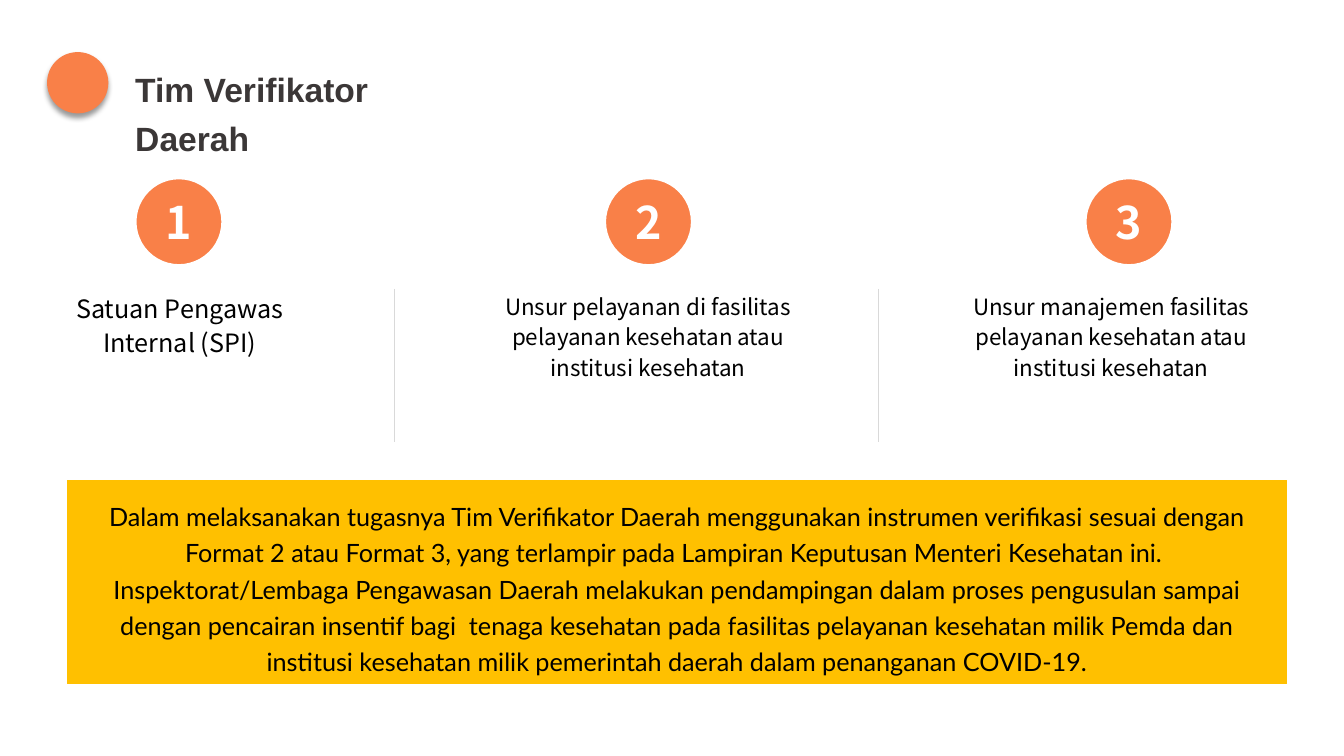
import pptx
import pptx.dml.color
import pptx.enum.shapes
import pptx.enum.text
import pptx.oxml
import pptx.oxml.ns
import pptx.util

SHAPES = pptx.enum.shapes.MSO_SHAPE
ALIGN = pptx.enum.text.PP_ALIGN
ANCHOR = pptx.enum.text.MSO_ANCHOR
WIDTH, HEIGHT = 13.33, 7.5
COLUMNS, ROWS = 16, 9

ORANGE, AMBER, GREY = "F98048", "FFC000", "D9D9D9"
WHITE, BLACK, CHARCOAL = "FFFFFF", "000000", "3B3737"
HEADING_FONT, CAPTION_FONT, BODY_FONT = "Arial", "Noto Sans CJK SC", "Lato"


def colour(hex_value):
    return pptx.dml.color.RGBColor.from_string(hex_value)


class SlideBuilder:
    """Draws on one slide; places are in columns and rows of a 16 by 9 grid."""

    def __init__(self, slide):
        self.slide = slide

    def place(self, left, top, width, height):
        column, row = WIDTH / COLUMNS, HEIGHT / ROWS
        return [pptx.util.Inches(length) for length in
                (left * column, top * row, width * column, height * row)]

    def set_text(self, frame, paragraphs, font, size, ink, bold=False,
                 align=ALIGN.CENTER, spacing=1.0, anchor=ANCHOR.TOP, insets=(0, 0, 0, 0)):
        frame.word_wrap = True
        frame.auto_size = pptx.enum.text.MSO_AUTO_SIZE.NONE
        frame.vertical_anchor = anchor
        (frame.margin_left, frame.margin_top, frame.margin_right,
         frame.margin_bottom) = [pptx.util.Inches(inset) for inset in insets]
        for index, words in enumerate(paragraphs):
            paragraph = frame.add_paragraph() if index else frame.paragraphs[0]
            paragraph.alignment = align
            paragraph.line_spacing = spacing
            paragraph.space_before = pptx.util.Pt(0)
            run = paragraph.add_run()
            run.text = words
            run.font.name = font
            run.font.size = pptx.util.Pt(size)
            run.font.bold = bold
            run.font.color.rgb = colour(ink)

    def title(self, words, *box):
        heading = self.slide.shapes.title
        heading.left, heading.top, heading.width, heading.height = self.place(*box)
        self.set_text(heading.text_frame, [words], HEADING_FONT, 24, CHARCOAL, bold=True,
                      align=ALIGN.LEFT, spacing=1.2, insets=(0.1, 0.05, 0.1, 0.05))

    def shape(self, preset, box, fill, outline=None, weight=0):
        drawn = self.slide.shapes.add_shape(preset, *self.place(*box))
        drawn.shadow.inherit = False
        drawn.fill.solid()
        drawn.fill.fore_color.rgb = colour(fill)
        if outline:
            drawn.line.color.rgb = colour(outline)
            drawn.line.width = pptx.util.Pt(weight)
        else:
            drawn.line.fill.background()
        return drawn

    def shadowed_disc(self, *box):
        disc = self.shape(SHAPES.OVAL, box, ORANGE)
        effects = disc._element.spPr.find(pptx.oxml.ns.qn("a:effectLst"))
        effects.append(pptx.oxml.parse_xml(
            f'<a:outerShdw {pptx.oxml.ns.nsdecls("a")} blurRad="{pptx.util.Pt(4)}" '
            f'dist="{pptx.util.Pt(3)}" dir="5400000" algn="ctr" rotWithShape="0">'
            f'<a:srgbClr val="{BLACK}"><a:alpha val="40000"/></a:srgbClr></a:outerShdw>'))

    def badge(self, number, left, top, size):
        circle = self.shape(SHAPES.OVAL, (left, top, size, size), ORANGE, WHITE, 3)
        self.set_text(circle.text_frame, [str(number)], CAPTION_FONT, 32, WHITE,
                      bold=True, anchor=ANCHOR.MIDDLE)

    def caption(self, words, size, *box):
        textbox = self.slide.shapes.add_textbox(*self.place(*box))
        self.set_text(textbox.text_frame, [words], CAPTION_FONT, size, BLACK, spacing=1.14)

    def divider(self, column, top, bottom):
        x, start, _, end = self.place(column, top, 0, bottom)
        rule = self.slide.shapes.add_connector(
            pptx.enum.shapes.MSO_CONNECTOR.STRAIGHT, x, start, x, end)
        rule.line.color.rgb = colour(GREY)
        rule.line.width = pptx.util.Pt(0.5)
        rule._element.spPr.append(pptx.oxml.parse_xml(
            f'<a:effectLst {pptx.oxml.ns.nsdecls("a")}/>'))

    def panel(self, paragraphs, *box):
        band = self.shape(SHAPES.RECTANGLE, box, AMBER, AMBER, 0.75)
        self.set_text(band.text_frame, paragraphs, BODY_FONT, 18, BLACK, spacing=1.2,
                      anchor=ANCHOR.MIDDLE, insets=(0.1, 0.13, 0.1, 0.05))


# Team members: badge column, caption column, caption width, text size, words
MEMBERS = [
    (1.6, 0.56, 3.16, 18, "Satuan Pengawas Internal (SPI)"),
    (7.19, 5.8, 3.83, 16,
     "Unsur pelayanan di fasilitas pelayanan kesehatan atau institusi kesehatan"),
    (12.91, 11.3, 3.86, 16,
     "Unsur manajemen fasilitas pelayanan kesehatan atau institusi kesehatan"),
]
DUTIES = [
    "Dalam melaksanakan tugasnya Tim Verifikator Daerah menggunakan instrumen "
    "verifikasi sesuai dengan Format 2 atau Format 3, yang terlampir pada Lampiran "
    "Keputusan Menteri Kesehatan ini. ",
    "Inspektorat/Lembaga Pengawasan Daerah melakukan pendampingan dalam proses "
    "pengusulan sampai dengan pencairan insentif bagi  tenaga kesehatan pada fasilitas "
    "pelayanan kesehatan milik Pemda dan institusi kesehatan milik pemerintah daerah "
    "dalam penanganan COVID-19.",
]


def main():
    deck = pptx.Presentation()
    deck.slide_width = pptx.util.Inches(WIDTH)
    deck.slide_height = pptx.util.Inches(HEIGHT)
    builder = SlideBuilder(deck.slides.add_slide(deck.slide_layouts[5]))

    # Heading
    builder.title("Tim Verifikator Daerah", 1.49, 0.67, 4.21, 0.59)
    builder.shadowed_disc(0.56, 0.62, 0.73, 0.73)

    # Numbered members
    caption_top = 3.44
    for number, (badge_left, left, width, size, words) in enumerate(MEMBERS, 1):
        builder.badge(number, badge_left, 2.11, 1.06)
        builder.caption(words, size, left, caption_top, width, 1.06)
    for column in (4.7, 10.46):
        builder.divider(column, caption_top, 5.26)

    # Duties
    builder.panel(DUTIES, 0.8, 5.72, 14.52, 2.42)

    deck.save("out.pptx")


if __name__ == "__main__":
    main()
